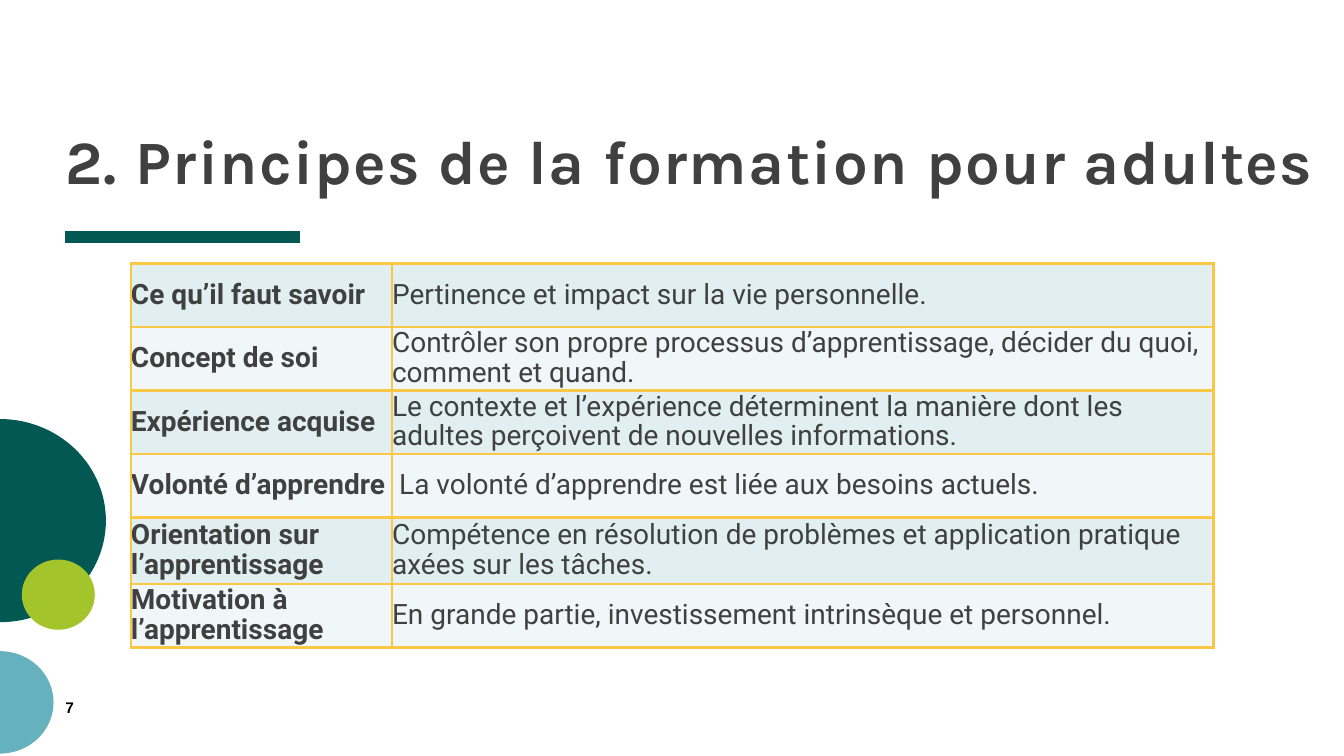
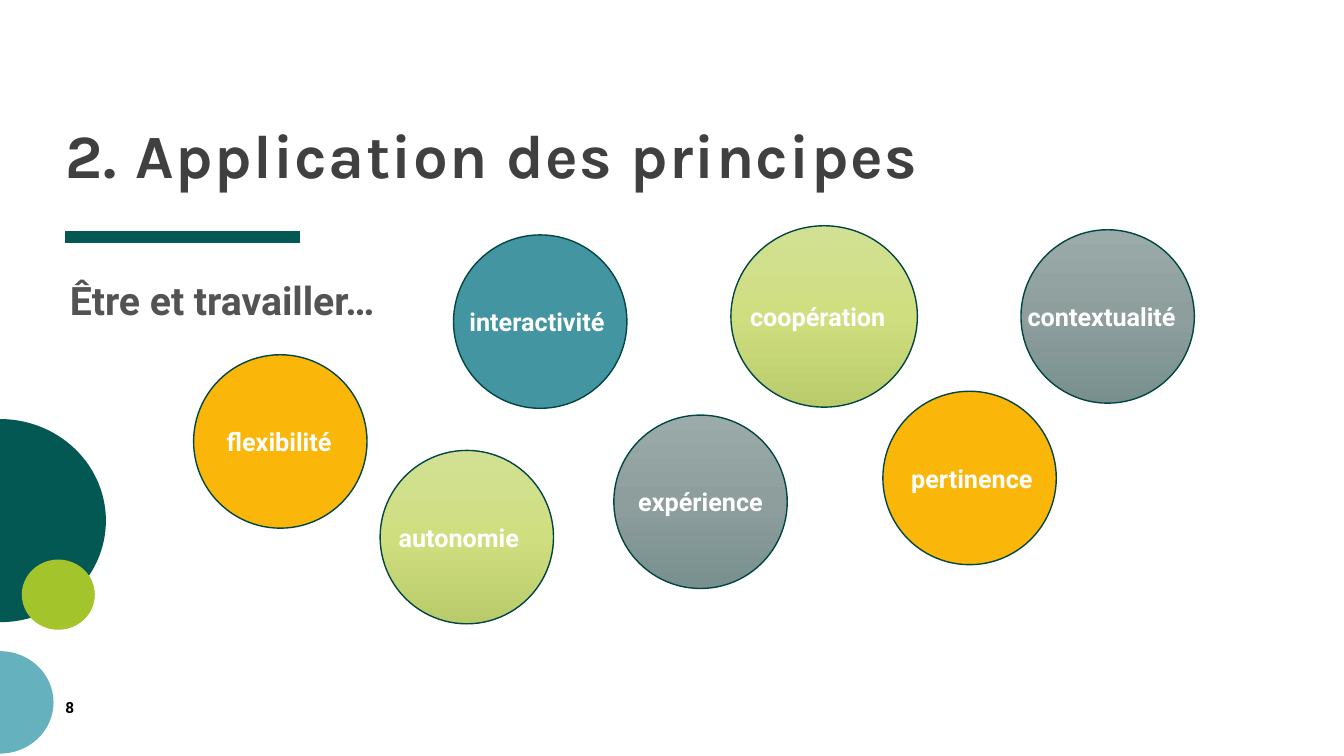
from copy import deepcopy
from math import cos, pi, sin

from pptx import Presentation
from pptx.dml.color import RGBColor
from pptx.enum.shapes import MSO_CONNECTOR, MSO_SHAPE
from pptx.enum.text import MSO_ANCHOR, PP_ALIGN
from pptx.oxml import parse_xml
from pptx.oxml.ns import nsdecls, qn
from pptx.oxml.xmlchemy import OxmlElement
from pptx.util import Cm, Pt

# Palette
WHITE = RGBColor(0xFF, 0xFF, 0xFF)
BLACK = RGBColor(0x00, 0x00, 0x00)
INK = RGBColor(0x40, 0x40, 0x40)
SUBTITLE_GREY = RGBColor(0x53, 0x53, 0x53)
DARK_GREEN = RGBColor(0x03, 0x58, 0x54)
OUTLINE_GREEN = RGBColor(0x02, 0x46, 0x43)
LIGHT_TEAL = RGBColor(0x65, 0xB2, 0xBE)
LIME = RGBColor(0xA3, 0xC4, 0x2A)
TEAL = RGBColor(0x44, 0x95, 0xA2)
AMBER = RGBColor(0xFA, 0xB6, 0x09)
BORDER_YELLOW = RGBColor(0xFB, 0xC8, 0x46)
ROW_TINTS = (RGBColor(0xE1, 0xEF, 0xF1), RGBColor(0xF1, 0xF7, 0xF8))
GREEN_GRADIENT = (RGBColor(0xD2, 0xE0, 0x93), RGBColor(0xCF, 0xDF, 0x80),
                  RGBColor(0xBA, 0xCB, 0x6C))
GREY_GRADIENT = (RGBColor(0x9A, 0xAB, 0xA9), RGBColor(0x8D, 0x9E, 0x9D),
                 RGBColor(0x78, 0x90, 0x8E))

TITLE_FONT = "Karla"
BODY_FONT = "Roboto"
LEFT = 1.65  # shared left edge, in centimetres

PRINCIPLES = [
    ("Ce qu’il faut savoir", "Pertinence et impact sur la vie personnelle."),
    ("Concept de soi", "Contrôler son propre processus d’apprentissage, "
                       "décider du quoi, comment et quand."),
    ("Expérience acquise", "Le contexte et l’expérience déterminent la manière "
                           "dont les adultes perçoivent de nouvelles informations."),
    ("Volonté d’apprendre", "La volonté d’apprendre est liée aux besoins actuels."),
    ("Orientation sur l’apprentissage", "Compétence en résolution de problèmes "
                                        "et application pratique axées sur les tâches."),
    ("Motivation à l’apprentissage",
     "En grande partie, investissement intrinsèque et personnel."),
]

# Label, left, top, width, height, fill, sideways shift of the label
CIRCLES = [
    ("coopération", 18.42, 5.69, 4.7, 4.57, GREEN_GRADIENT, -0.16),
    ("expérience", 15.47, 10.46, 4.37, 4.37, GREY_GRADIENT, 0),
    ("flexibilité", 4.88, 8.94, 4.37, 4.37, AMBER, -0.03),
    ("autonomie", 9.58, 11.35, 4.37, 4.37, GREEN_GRADIENT, -0.2),
    ("contextualité", 25.73, 5.79, 4.37, 4.37, GREY_GRADIENT, -0.15),
    ("pertinence", 22.25, 9.86, 4.37, 4.37, AMBER, 0.06),
    ("interactivité", 11.43, 5.92, 4.37, 4.37, TEAL, -0.08),
]


class SlideBuilder:
    """Holds the deck style and the slide being filled."""

    def __init__(self, deck):
        self.deck = deck
        self.slide = None

    def new_slide(self, title, title_top, number, number_font):
        self.slide = self.deck.slides.add_slide(self.deck.slide_layouts[6])
        self.decoration()
        self.text(title, LEFT, title_top, 31.5, 4.67, 44, INK, TITLE_FONT,
                  spacing=0.8, anchor=MSO_ANCHOR.BOTTOM, tracking=100)
        self.text(number, LEFT, 17.58, 0.5, 0.46, 11, BLACK, number_font)

    def decoration(self):
        # Rule under the title
        rule = self.slide.shapes.add_connector(
            MSO_CONNECTOR.STRAIGHT, Cm(LEFT), Cm(5.97), Cm(7.57), Cm(5.97))
        rule.line.color.rgb = DARK_GREEN
        rule.line.width = Pt(8)
        rule._element.spPr.append(OxmlElement("a:effectLst"))
        # Discs on the left edge
        self.half_disc(13.12, 2.67, 2.56, DARK_GREEN)
        self.half_disc(17.7, 1.35, 1.29, LIGHT_TEAL)
        self.ellipse(0.55, 14.1, 1.84, 1.77, LIME)

    def half_disc(self, middle, radius_x, radius_y, color, steps=60):
        angles = [pi * step / steps - pi / 2 for step in range(steps + 1)]
        points = [(Cm(radius_x * cos(angle)), Cm(middle + radius_y * sin(angle)))
                  for angle in angles]
        outline = self.slide.shapes.build_freeform(*points[0])
        outline.add_line_segments(points[1:], close=True)
        self.paint(outline.convert_to_shape(), color)

    def paint(self, shape, fill, line=None):
        shape.shadow.inherit = False
        if isinstance(fill, RGBColor):
            shape.fill.solid()
            shape.fill.fore_color.rgb = fill
        else:
            shape.fill.gradient()
            shape.fill.gradient_angle = 270
            stop_list = shape._element.spPr.find(".//" + qn("a:gsLst"))
            stop_list.insert(1, deepcopy(stop_list[0]))
            for stop, color, place in zip(shape.fill.gradient_stops, fill, (0, 0.5, 1)):
                stop.color.rgb = color
                stop.position = place
        if line is None:
            shape.line.fill.background()
        else:
            shape.line.color.rgb = line
            shape.line.width = Pt(1)

    def ellipse(self, left, top, width, height, fill, line=None):
        shape = self.slide.shapes.add_shape(
            MSO_SHAPE.OVAL, Cm(left), Cm(top), Cm(width), Cm(height))
        self.paint(shape, fill, line)
        return shape

    def circle(self, label, left, top, width, height, fill, shift):
        frame = self.ellipse(left, top, width, height, fill, OUTLINE_GREEN).text_frame
        frame.word_wrap = False
        frame.vertical_anchor = MSO_ANCHOR.MIDDLE
        self.insets(frame, 0)
        frame.margin_left = Cm(max(2 * shift, 0))
        frame.margin_right = Cm(max(-2 * shift, 0))
        frame.text = label
        self.format(frame.paragraphs[0], 18, WHITE)
        frame.paragraphs[0].alignment = PP_ALIGN.CENTER

    def text(self, words, left, top, width, height, size, color, font=BODY_FONT,
             spacing=None, anchor=MSO_ANCHOR.TOP, inset=0, tracking=None):
        box = self.slide.shapes.add_textbox(Cm(left), Cm(top), Cm(width), Cm(height))
        frame = box.text_frame
        frame.word_wrap = True
        frame.vertical_anchor = anchor
        self.insets(frame, inset)
        frame.text = words
        self.format(frame.paragraphs[0], size, color, font, spacing=spacing,
                    tracking=tracking)

    def table(self, rows, left, top, widths, heights):
        table = self.slide.shapes.add_table(
            len(rows), len(widths), Cm(left), Cm(top),
            Cm(sum(widths)), Cm(sum(heights))).table
        table.first_row = table.horz_banding = False
        for column, width in zip(table.columns, widths):
            column.width = Cm(width)
        for index, (row, height) in enumerate(zip(rows, heights)):
            table.rows[index].height = Cm(height)
            for position, words in enumerate(row):
                cell = table.cell(index, position)
                self.borders(cell)
                cell.fill.solid()
                cell.fill.fore_color.rgb = ROW_TINTS[index % 2]
                cell.vertical_anchor = MSO_ANCHOR.MIDDLE
                self.insets(cell, 0)
                cell.text = words
                self.format(cell.text_frame.paragraphs[0], 20, INK,
                            bold=position == 0, spacing=0.9)
        return table

    @staticmethod
    def borders(cell):
        properties = cell._tc.get_or_add_tcPr()
        for side in ("lnL", "lnR", "lnT", "lnB"):
            properties.append(parse_xml(
                f'<a:{side} {nsdecls("a")} w="{Pt(2)}"><a:solidFill>'
                f'<a:srgbClr val="{BORDER_YELLOW}"/></a:solidFill></a:{side}>'))

    @staticmethod
    def insets(holder, inset):
        holder.margin_left = holder.margin_right = Cm(inset)
        holder.margin_top = holder.margin_bottom = Cm(inset)

    @staticmethod
    def format(paragraph, size, color, font=BODY_FONT, bold=True, spacing=None,
               tracking=None):
        if spacing:
            paragraph.line_spacing = spacing
        for span in paragraph.runs:
            span.font.size = Pt(size)
            span.font.name = font
            span.font.bold = bold
            span.font.color.rgb = color
            if tracking:
                span._r.get_or_add_rPr().set("spc", str(tracking))


def main():
    deck = Presentation()
    deck.slide_width, deck.slide_height = Cm(33.87), Cm(19.05)
    builder = SlideBuilder(deck)

    # Principles table
    builder.new_slide("2. Principes de la formation pour adultes", 0.28, "7", "Arial")
    table = builder.table(PRINCIPLES, 3.3, 6.64, (6.58, 20.7),
                          (1.6, 1.6, 1.6, 1.6, 1.68, 1.6))
    table.cell(3, 1).margin_left = Cm(0.18)

    # Application circles
    builder.new_slide("2. Application des principes", 0.13, "8", BODY_FONT)
    for circle in CIRCLES:
        builder.circle(*circle)
    builder.text("Être et travailler…", 1.63, 6.96, 9.78, 1.35, 28, SUBTITLE_GREY,
                 spacing=0.9, inset=0.13)

    deck.save("out.pptx")


if __name__ == "__main__":
    main()
